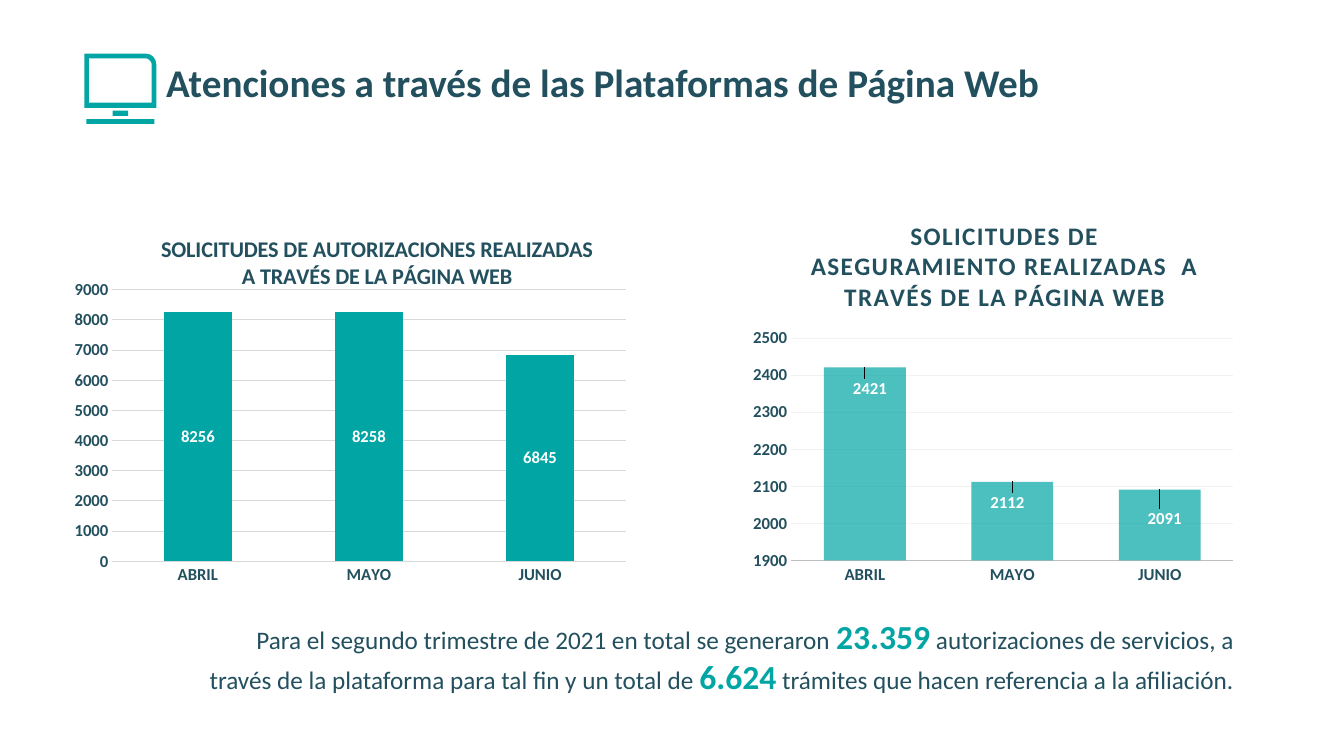
from math import cos, pi, sin

from lxml import etree
from pptx import Presentation
from pptx.chart.data import CategoryChartData
from pptx.dml.color import RGBColor
from pptx.enum.chart import XL_CHART_TYPE, XL_LABEL_POSITION, XL_TICK_MARK
from pptx.enum.text import PP_ALIGN
from pptx.oxml.ns import qn
from pptx.util import Cm, Pt

STACKED, CLUSTERED = XL_CHART_TYPE.COLUMN_STACKED, XL_CHART_TYPE.COLUMN_CLUSTERED
CENTER, OUTSIDE_END = XL_LABEL_POSITION.CENTER, XL_LABEL_POSITION.OUTSIDE_END
NO_TICK = XL_TICK_MARK.NONE
RIGHT = PP_ALIGN.RIGHT

FONT = "Calibri"
NAVY = RGBColor(0x23, 0x50, 0x5E)
TEAL = RGBColor(0x00, 0xA5, 0xA4)
WHITE = RGBColor(0xFF, 0xFF, 0xFF)
SILVER = RGBColor(0xD9, 0xD9, 0xD9)
GRAY = RGBColor(0xBF, 0xBF, 0xBF)
PALE = RGBColor(0xF2, 0xF2, 0xF2)

# Content
HEADING = "Atenciones a través de las Plataformas de Página Web"
SUMMARY = [  # text, highlighted
    ("Para el segundo trimestre de 2021 en total se generaron ", False),
    ("23.359", True),
    (" autorizaciones de servicios, a través de la plataforma para tal fin"
     " y un total de ", False),
    ("6.624", True),
    (" trámites que hacen referencia a la afiliación.", False),
]
MONTHS = ["ABRIL", "MAYO", "JUNIO"]
CHARTS = [  # box in cm; plot and title places are fractions of the box
    dict(title="SOLICITUDES DE AUTORIZACIONES REALIZADAS A TRAVÉS DE LA PÁGINA WEB",
         title_size=16, title_spacing=0, title_at=(0.14, 0.05),
         box=(1.88, 5.31, 14.17, 9.5), plot=(0.06, 0.21, 0.92, 0.72),
         kind=STACKED, values=[8256, 8258, 6845], scale=(0, 9000, 1000),
         gap=150, overlap=100, alpha=100, base=(SILVER, 0.75), grid=SILVER,
         label_pos=CENTER, label_shifts=[]),
    dict(title="SOLICITUDES DE ASEGURAMIENTO REALIZADAS  A TRAVÉS DE LA PÁGINA WEB",
         title_size=18, title_spacing=100, title_at=(0.13, 0.03),
         box=(18.67, 5.08, 12.67, 9.83), plot=(0.1, 0.35, 0.88, 0.57),
         kind=CLUSTERED, values=[2421, 2112, 2091], scale=(1900, 2500, 100),
         gap=80, overlap=25, alpha=70, base=(GRAY, 1.25), grid=PALE,
         label_pos=OUTSIDE_END,
         label_shifts=[(0.01, 0.09), (-0.01, 0.09), (0.01, 0.11)]),
]


def set_font(font, size, color, bold=True):
    font.name, font.size, font.bold = FONT, Pt(size), bold
    font.color.rgb = color


def add_text(slide, box, runs, size, bold=False, align=None):
    tf = slide.shapes.add_textbox(*map(Cm, box)).text_frame
    tf.word_wrap = True
    p = tf.paragraphs[0]
    p.alignment = align
    set_font(p.font, size, NAVY, bold)
    for text, highlighted in runs:
        r = p.add_run()
        r.text = text
        if highlighted:
            set_font(r.font, 24, TEAL)


def set_layout(parent, index, **values):
    """Give a chart part a manual layout as its child number index."""
    for old in parent.findall(qn("c:layout")):
        parent.remove(old)
    layout = etree.Element(qn("c:layout"))
    manual = etree.SubElement(layout, qn("c:manualLayout"))
    for tag, value in values.items():
        etree.SubElement(manual, qn("c:" + tag)).set("val", str(value))
    parent.insert(index, layout)


def style_axis(axis):
    axis.major_tick_mark = axis.minor_tick_mark = NO_TICK
    set_font(axis.tick_labels.font, 12, NAVY)


def add_column_chart(slide, c):
    data = CategoryChartData()
    data.categories = MONTHS
    data.add_series("Series 1", c["values"])
    chart = slide.shapes.add_chart(c["kind"], *map(Cm, c["box"]), data).chart
    chart.has_legend = False
    chart.font.name, chart.font.size, chart.font.bold = FONT, Pt(10), True

    # Title
    p = chart.chart_title.text_frame.paragraphs[0]
    p.text = c["title"]
    set_font(p.font, c["title_size"], NAVY)
    for props in chart.element.xpath("./c:chart/c:title//a:defRPr"):
        props.set("spc", str(c["title_spacing"]))
    x, y = c["title_at"]
    title = chart.element.xpath("./c:chart/c:title")[0]
    set_layout(title, 1, xMode="edge", yMode="edge", x=x, y=y)

    # Axes
    cat, val = chart.category_axis, chart.value_axis
    style_axis(cat)
    style_axis(val)
    color, width = c["base"]
    cat.format.line.color.rgb, cat.format.line.width = color, Pt(width)
    val.format.line.fill.background()
    val.minimum_scale, val.maximum_scale, val.major_unit = c["scale"]
    grid = val.major_gridlines.format.line
    grid.color.rgb, grid.width = c["grid"], Pt(0.75)
    x, y, w, h = c["plot"]
    set_layout(chart.element.xpath("./c:chart/c:plotArea")[0], 0,
               layoutTarget="inner", xMode="edge", yMode="edge", x=x, y=y, w=w, h=h)

    # Columns
    plot = chart.plots[0]
    plot.vary_by_categories = False
    plot.gap_width, plot.overlap = c["gap"], c["overlap"]
    series = plot.series[0]
    series.format.fill.solid()
    series.format.fill.fore_color.rgb = TEAL
    if c["alpha"] < 100:
        fill = chart.element.xpath(".//c:ser/c:spPr/a:solidFill/a:srgbClr")[0]
        etree.SubElement(fill, qn("a:alpha")).set("val", str(c["alpha"] * 1000))

    # Value labels
    labels = series.data_labels
    labels.show_value, labels.position = True, c["label_pos"]
    set_font(labels.font, 12, WHITE)
    for i, (dx, dy) in enumerate(c["label_shifts"]):
        label = series.points[i].data_label
        label.position = c["label_pos"]
        set_font(label.font, 12, WHITE)
        set_layout(chart.element.xpath(".//c:dLbl")[i], 1, x=dx, y=dy)


def corner(cx, cy, radius, steps=8):
    angles = [pi / 2 * i / steps for i in range(steps + 1)]
    return [(cx + radius * cos(a), cy - radius * sin(a)) for a in angles]


def bar(left, top, right, bottom):
    return [(left, top), (left, bottom), (right, bottom), (right, top)]


def add_computer_icon(slide):
    # Outlines in hundredths of a centimetre
    outlines = [
        [(213, 135), (213, 272), (394, 272)] + corner(366, 163, 28),
        [(224, 147), (224, 259), (382, 259)] + corner(366, 163, 16),
        bar(218, 300, 389, 312),
        bar(284, 279, 323, 292),
    ]
    builder = slide.shapes.build_freeform(*outlines[0][0], scale=Cm(0.01))
    for i, points in enumerate(outlines):
        if i:
            builder.move_to(*points[0])
        builder.add_line_segments(points[1:], close=True)
    s = builder.convert_to_shape()
    s.shadow.inherit = False
    s.fill.solid()
    s.fill.fore_color.rgb = TEAL
    s.line.fill.background()


def main():
    prs = Presentation()
    prs.slide_width, prs.slide_height = Cm(33.87), Cm(19.05)
    slide = prs.slides.add_slide(prs.slide_layouts[6])
    add_text(slide, (3.94, 1.35, 23.29, 1.45), [(HEADING, False)], 28, bold=True)
    add_text(slide, (4.72, 15.39, 26.62, 2.31), SUMMARY, 18, align=RIGHT)
    add_computer_icon(slide)
    for c in CHARTS:
        add_column_chart(slide, c)
    prs.save("out.pptx")


if __name__ == "__main__":
    main()
